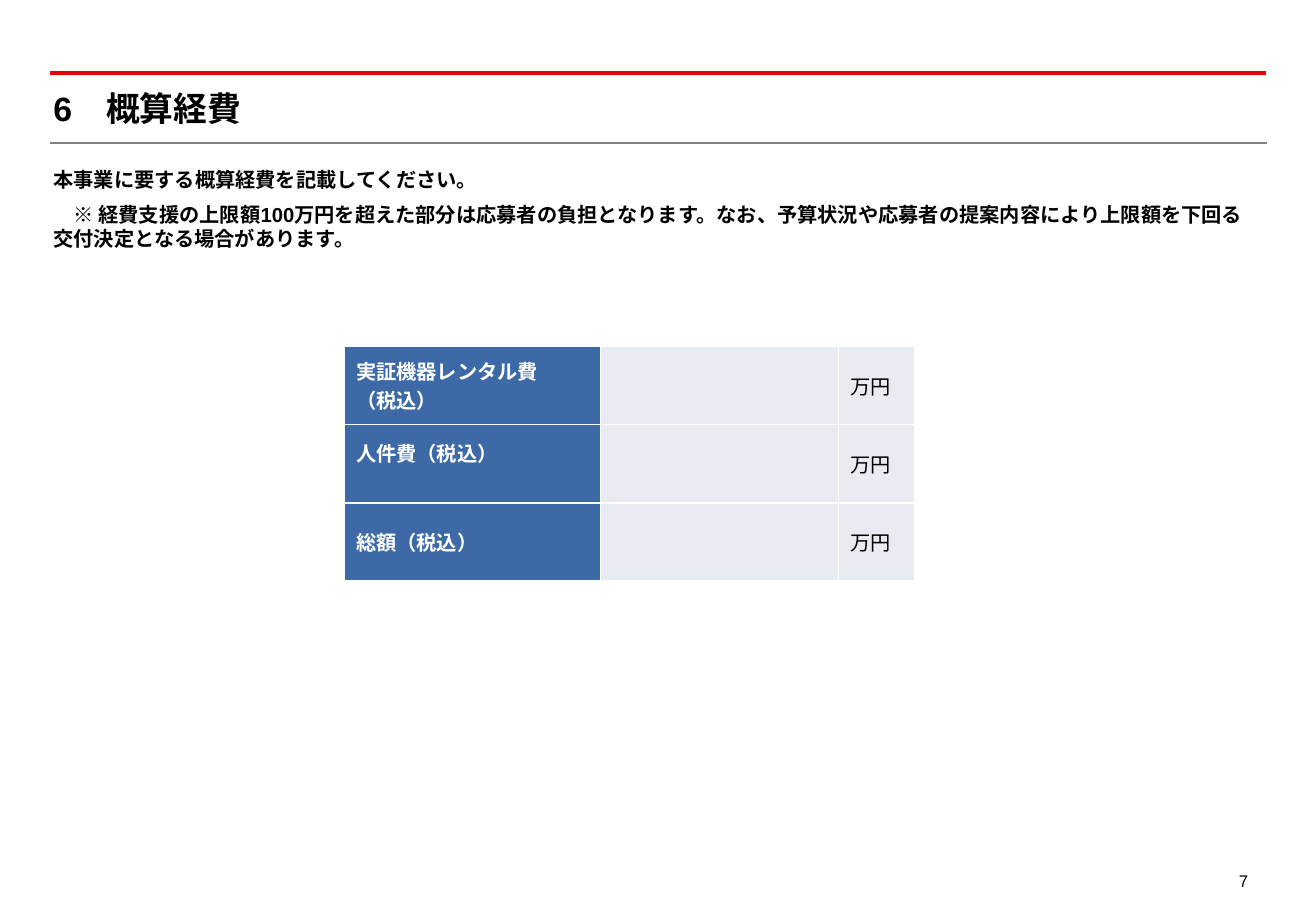
from lxml.etree import SubElement
from pptx import Presentation
from pptx.dml.color import RGBColor
from pptx.enum.lang import MSO_LANGUAGE_ID as Language
from pptx.enum.shapes import MSO_CONNECTOR as Connector
from pptx.enum.text import MSO_ANCHOR as Anchor, PP_ALIGN as Align
from pptx.oxml.ns import qn
from pptx.util import Inches, Pt

# Content
TITLE = "6　概算経費"
NOTES = [
    "本事業に要する概算経費を記載してください。",
    "　※ 経費支援の上限額100万円を超えた部分は応募者の負担となります。"
    "なお、予算状況や応募者の提案内容により上限額を下回る交付決定となる場合があります。",
]
COSTS = [
    (["実証機器レンタル費", "（税込）"], [""], ["万円"]),
    (["人件費（税込）"], [""], ["万円"]),
    (["総額（税込）"], [""], ["万円"]),
]
PAGE_NUMBER = "7"

# Format
COLORS = {"red": "E60000", "gray": "808080", "blue": "3D6AA7",
          "pale": "E8EBF1", "white": "FFFFFF", "black": "000000"}
COLUMN_WIDTHS = (2.11, 1.96, 0.63)
ROW_HEIGHT = 0.645
RULES = [(0.6, 10.42, "red", 2.5), (1.18, 10.43, "gray", 1.25)]
LEFT, TEXT_WIDTH = 0.44, 9.91


def color(name):
    return RGBColor.from_string(COLORS[name])


def write(frame, lines, size=12, ink="black", bold=False, align=Align.LEFT,
          anchor=Anchor.TOP, after=0):
    frame.word_wrap = True
    frame.vertical_anchor = anchor
    for index, line in enumerate(lines):
        para = frame.paragraphs[0] if index == 0 else frame.add_paragraph()
        para.alignment = align
        para.space_after = Pt(after if index < len(lines) - 1 else 0)
        span = para.add_run()
        span.text = line
        font = span.font
        font.name, font.size, font.bold = "Arial", Pt(size), bold
        font.color.rgb = color(ink)
        font.language_id = Language.JAPANESE


def add_text(page, place, lines, margin=0, **style):
    box = page.shapes.add_textbox(*map(Inches, place))
    frame = box.text_frame
    frame.margin_left = frame.margin_right = Inches(margin)
    frame.margin_top = frame.margin_bottom = Inches(margin / 2)
    write(frame, lines, **style)


def add_borders(cell):
    properties = cell._tc.get_or_add_tcPr()
    for position, side in enumerate(("lnL", "lnR", "lnT", "lnB")):
        border = SubElement(properties, qn(f"a:{side}"), w=str(Pt(1)))
        fill = SubElement(border, qn("a:solidFill"))
        SubElement(fill, qn("a:srgbClr"), val=COLORS["white"])
        properties.remove(border)
        properties.insert(position, border)


def add_rule(page, top, right, ink, width):
    rule = page.shapes.add_connector(Connector.STRAIGHT, Inches(0.41), Inches(top),
                                     Inches(right), Inches(top))
    rule.line.color.rgb = color(ink)
    rule.line.width = Pt(width)
    SubElement(rule._element.spPr, qn("a:effectLst"))


def add_costs(page):
    rows, columns = len(COSTS), len(COLUMN_WIDTHS)
    table = page.shapes.add_table(
        rows, columns, Inches(2.83), Inches(2.85),
        Inches(sum(COLUMN_WIDTHS)), Inches(rows * ROW_HEIGHT)).table
    table.first_row = table.horz_banding = False
    for column, width in zip(table.columns, COLUMN_WIDTHS):
        column.width = Inches(width)
    for r, cost in enumerate(COSTS):
        table.rows[r].height = Inches(ROW_HEIGHT)
        for c, lines in enumerate(cost):
            cell, label = table.cell(r, c), c == 0
            cell.fill.solid()
            cell.fill.fore_color.rgb = color("blue" if label else "pale")
            write(cell.text_frame, lines, bold=label, ink="white" if label else "black")
            cell.vertical_anchor = Anchor.MIDDLE
            add_borders(cell)
    # The middle label sits a little above the centre of its row
    table.cell(1, 0).margin_bottom = Inches(0.23)


def main():
    deck = Presentation()
    deck.slide_width, deck.slide_height = Inches(10.83), Inches(7.5)
    page = deck.slides.add_slide(deck.slide_layouts[6])

    # Heading between two rules
    for rule in RULES:
        add_rule(page, *rule)
    add_text(page, (LEFT, 0.72, TEXT_WIDTH, 0.34), [TITLE], size=20, bold=True,
             anchor=Anchor.MIDDLE)

    # Instructions, cost table, page number
    add_text(page, (LEFT, 1.38, TEXT_WIDTH, 0.79), NOTES, bold=True, after=6)
    add_costs(page)
    add_text(page, (9.93, 7.12, 0.44, 0.28), [PAGE_NUMBER], margin=0.1, size=10,
             align=Align.RIGHT)
    deck.save("out.pptx")


if __name__ == "__main__":
    main()
